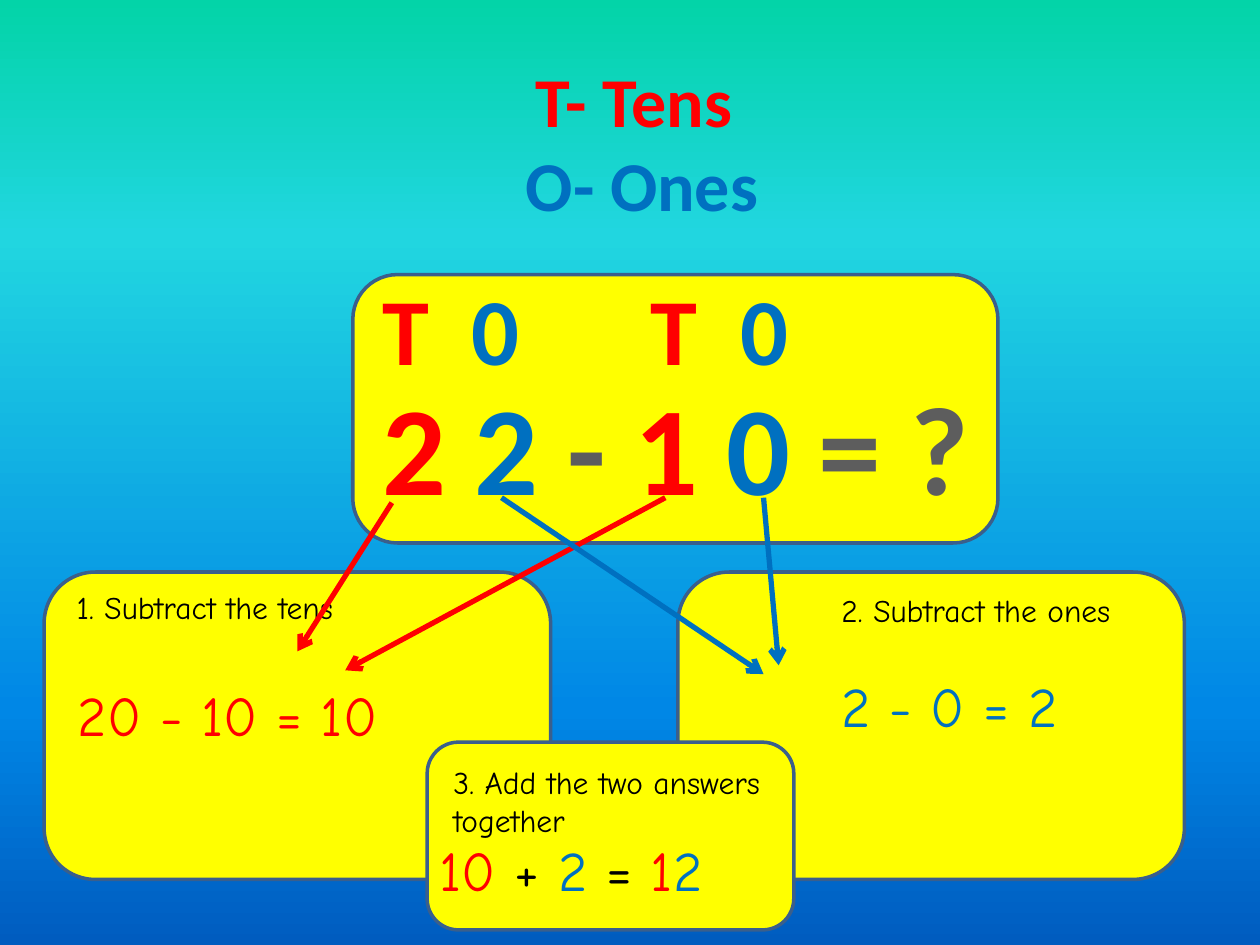
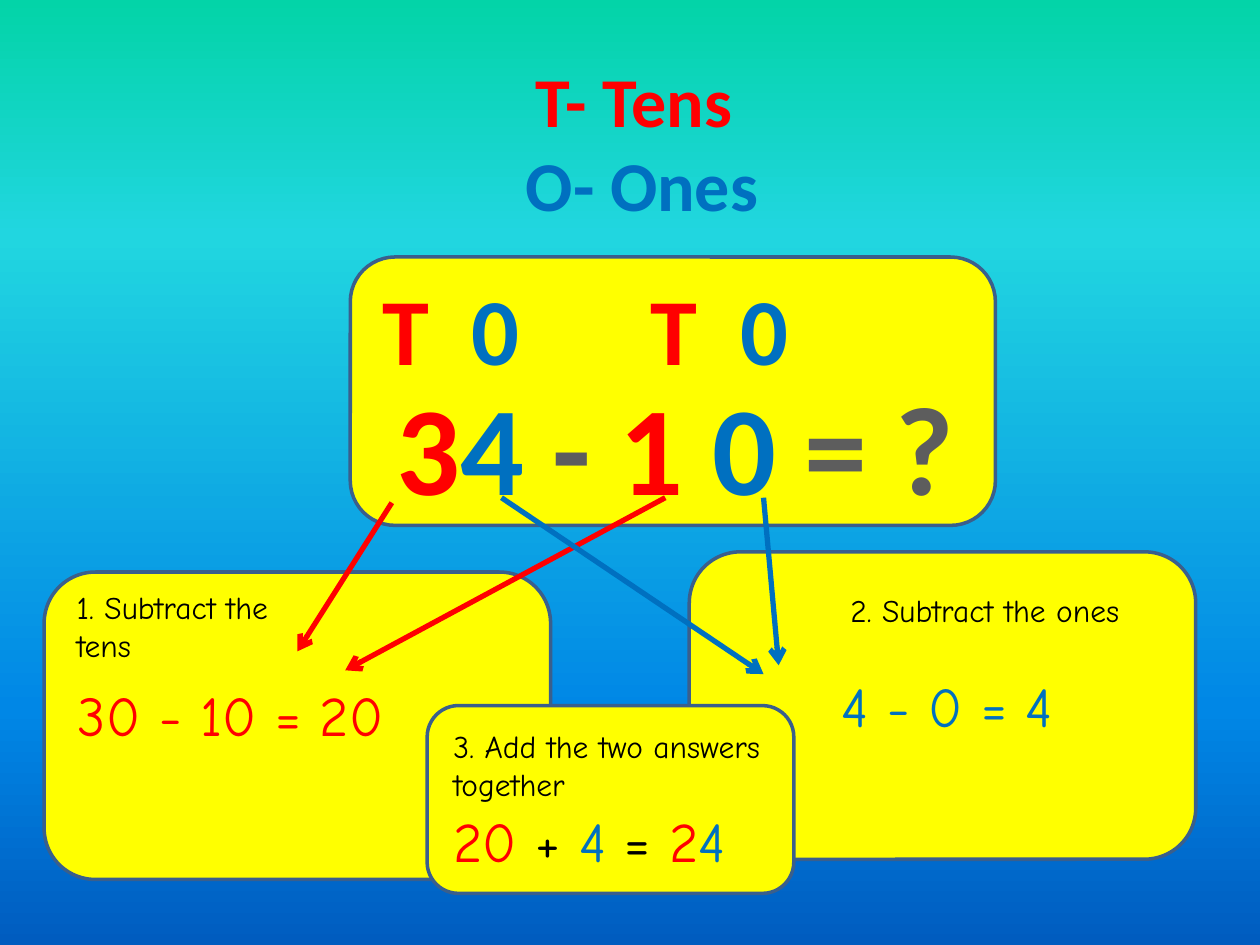
import pptx
import pptx.util
import pptx.dml.color
import pptx.enum.shapes
import pptx.enum.text
import pptx.oxml.ns
from lxml import etree

Inches, Pt = pptx.util.Inches, pptx.util.Pt
qn = pptx.oxml.ns.qn

# Colours, fonts and gradients shared by both slides
RED, BLUE, BLACK, WHITE = "FF0000", "0070C0", "000000", "FFFFFF"
YELLOW, EDGE = "FFFF00", "3A5F8C"
SKY = [(0, "03D4A8"), (25, "21D6E0"), (75, "0087E6"), (100, "005CBF")]
INK = [(0, "555555"), (49, "5D5D5D"), (50, BLACK), (95, BLACK), (100, BLACK)]
BOLD = {"font": "Calibri", "bold": True, "center": True}
HAND = {"font": "Comic Neue"}
SPACE = 0.226  # width of a Calibri space, in ems


def color(code):
    return pptx.dml.color.RGBColor.from_string(code)


def blend(fill, owner, stops):
    """Give a fill a top-to-bottom gradient; owner is the element around it."""
    fill.gradient()
    fill.gradient_angle = 270
    parts = owner.find(".//" + qn("a:gsLst"))
    for old in list(parts):
        parts.remove(old)
    for place, code in stops:
        stop = etree.SubElement(parts, qn("a:gs"), pos=str(place * 1000))
        etree.SubElement(stop, qn("a:srgbClr"), val=code)


def outline(run):
    """Draw a thin white edge around the letters of a run."""
    line = etree.Element(qn("a:ln"), w=str(Pt(1.4)))
    fill = etree.SubElement(line, qn("a:solidFill"))
    etree.SubElement(fill, qn("a:srgbClr"), val=WHITE)
    run.font._element.insert(0, line)


def text(slide, at, lines, size=18, font="Calibri", bold=False,
         center=False, wrap=True):
    """Each line is a list of (words, tint); a lone space is set double wide."""
    frame = slide.shapes.add_textbox(*map(Inches, at)).text_frame
    frame.word_wrap = wrap
    frame.auto_size = pptx.enum.text.MSO_AUTO_SIZE.SHAPE_TO_FIT_TEXT
    for i, line in enumerate(lines):
        para = frame.add_paragraph() if i else frame.paragraphs[0]
        if center:
            para.alignment = pptx.enum.text.PP_ALIGN.CENTER
        for words, tint in line:
            run = para.add_run()
            run.text = words
            run.font.size, run.font.name = Pt(size), font
            run.font.bold = bold
            if tint is INK:
                blend(run.font.fill, run.font._element, INK)
            else:
                run.font.color.rgb = color(tint)
            if bold:
                outline(run)
            if words == " ":
                run.font._element.set("spc", str(round(size * SPACE * 100)))


def card(slide, at):
    kind = pptx.enum.shapes.MSO_SHAPE.ROUNDED_RECTANGLE
    shape = slide.shapes.add_shape(kind, *map(Inches, at))
    shape.shadow.inherit = False
    shape.fill.solid()
    shape.fill.fore_color.rgb = color(YELLOW)
    shape.line.color.rgb = color(EDGE)
    shape.line.width = Pt(2)


def arrow(slide, ends, tint):
    kind = pptx.enum.shapes.MSO_CONNECTOR.STRAIGHT
    link = slide.shapes.add_connector(kind, *map(Inches, ends))
    link.line.color.rgb = color(tint)
    link.line.width = Pt(3)
    etree.SubElement(link.line._get_or_add_ln(), qn("a:tailEnd"), type="arrow")
    etree.SubElement(link._element.spPr, qn("a:effectLst"))


def title(slide):
    lines = [[("T- Tens", RED), (" ", RED)], [("O- Ones", BLUE)]]
    text(slide, (2.14, 0.41, 5.91, 1.45), lines, size=40, **BOLD)


def problem(slide, left, top, digits):
    """The sum to solve, under its tens and ones headings."""
    card(slide, (left, top, 5.12, 2.13))
    tens, ones = digits
    text(slide, (2.8, 2.88, 5.12, 1.31),
         [[(tens, RED), (ones, BLUE), (" - ", INK), ("1 ", RED), ("0", BLUE),
           (" = ?", INK)]], size=72, **BOLD)
    for x in (2.93, 5.06):
        text(slide, (x, 2.1, 1.3, 1.01),
             [[("T", RED), (" ", RED), ("0", BLUE)]],
             size=54, wrap=False, **BOLD)


def step(slide, box, label, words, place, answer):
    """A card with its instruction and its coloured answer."""
    card(slide, box)
    text(slide, label, [[(words, BLACK)]], **HAND)
    text(slide, place, [answer], size=32, **HAND)


def build(deck, left, top, digits, tens, ones, total):
    slide = deck.slides.add_slide(deck.slide_layouts[6])
    title(slide)
    problem(slide, left, top, digits)

    # Step 1: tens
    step(slide, (0.35, 4.54, 4.02, 2.44), (0.51, 4.62, tens["wide"], 0.4),
         "1. Subtract the tens", (0.52, 5.35, 2.75, 0.64),
         [(tens["sum"], RED)])
    # Step 2: ones
    x, y = ones["at"]
    step(slide, (x, y, 4.02, 2.44), (ones["label"], 4.64, 2.49, 0.71),
         "2. Subtract the ones", (6.58, 5.28, 2.67, 0.64),
         [(ones["sum"], BLUE)])

    # Arrows from the digits to the steps
    for ends in ((3.11, 3.99, 2.36, 5.17), (5.28, 3.95, 2.74, 5.32)):
        arrow(slide, ends, RED)
    for ends in ((3.98, 3.95, 6.06, 5.35), (6.06, 3.95, 6.18, 5.28)):
        arrow(slide, ends, BLUE)

    # Step 3: total
    y = total["top"]
    first, second = total["parts"]
    step(slide, (3.39, y, 2.91, 1.49), (3.5, y + 0.12, 2.8, 0.71),
         "3. Add the two answers together", (*total["at"], 2.67, 0.64),
         [(first, RED), (" + ", BLACK), (second, BLUE), (" = ", BLACK),
          (first[0], RED), (second, BLUE)])


def main():
    deck = pptx.Presentation()
    deck.slide_width, deck.slide_height = Inches(10), Inches(7.5)
    back = deck.slide_master.background
    blend(back.fill, deck.slide_master.element, SKY)

    build(deck, 2.8, 2.18, ("2 ", "2"),
          tens={"sum": "20 - 10 = 10", "wide": 2.88},
          ones={"sum": "2 - 0 = 2", "at": (5.38, 4.54), "label": 6.58},
          total={"parts": ("10", "2"), "top": 5.89, "at": (3.39, 6.58)})
    build(deck, 2.78, 2.04, ("3", "4"),
          tens={"sum": "30 - 10 = 20", "wide": 2.13},
          ones={"sum": "4 - 0 = 4", "at": (5.47, 4.38), "label": 6.65},
          total={"parts": ("20", "4"), "top": 5.6, "at": (3.5, 6.35)})
    deck.save("out.pptx")


if __name__ == "__main__":
    main()
